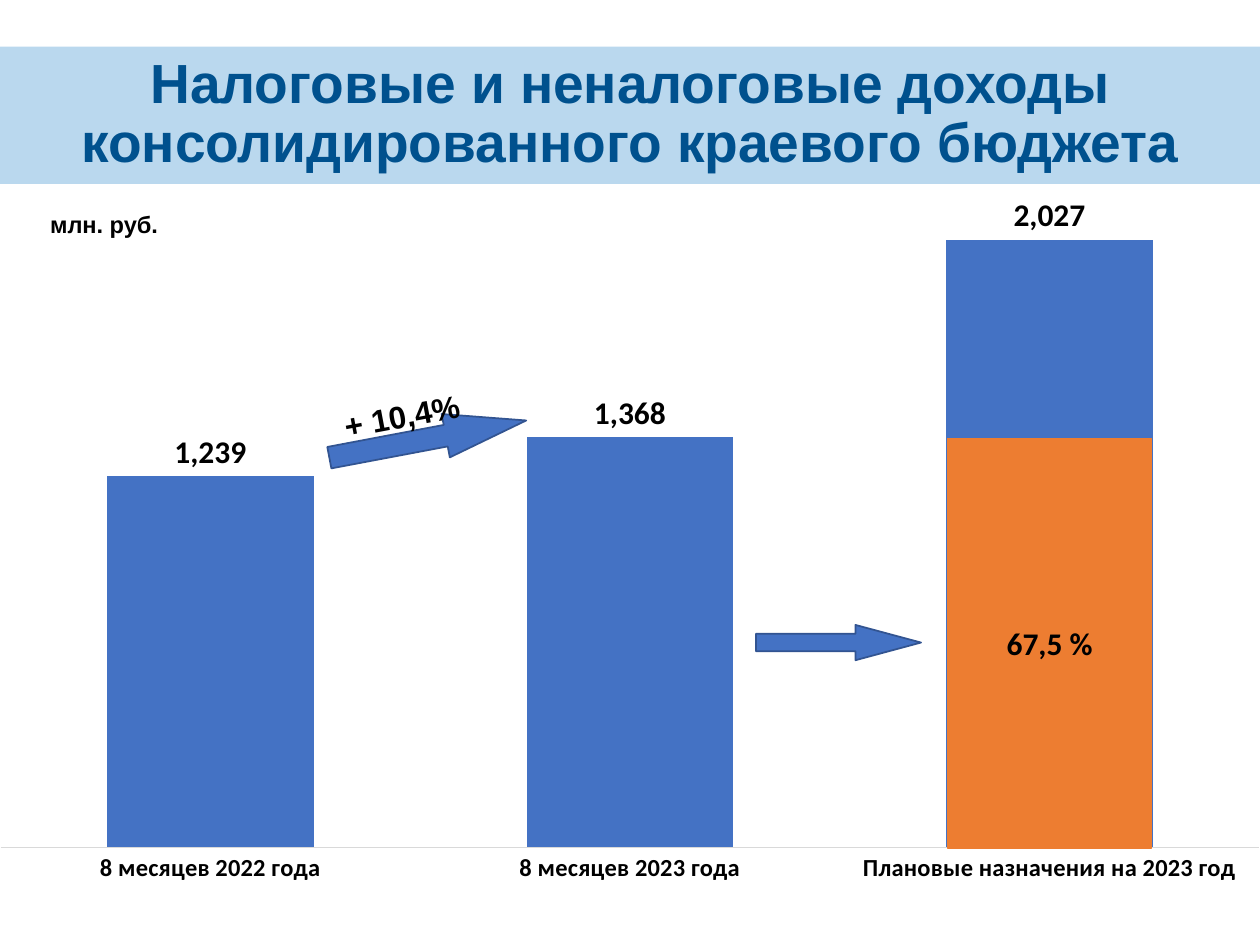
from lxml import etree
from pptx import Presentation
from pptx.chart.data import CategoryChartData
from pptx.dml.color import RGBColor
from pptx.enum import chart as ch, shapes, text
from pptx.oxml import parse_xml
from pptx.oxml.ns import nsdecls
from pptx.util import Inches, Pt

# Content
TITLE = "Налоговые и неналоговые доходы консолидированного краевого бюджета"
UNIT = "млн. руб."
REVENUE = {
    "8 месяцев 2022 года": 1239,
    "8 месяцев 2023 года": 1368,
    "Плановые назначения на 2023 год": 2027,
}
GROWTH, SHARE = "+ 10,4%", "67,5 %"
BLUE, ORANGE, BLACK = "4472C4", "ED7D31", "000000"
ARROW_LINE, TILT = "325491", 349.3
PLOT = {"x": 0, "y": 0.025, "w": 1, "h": 0.847}


def rgb(value):
    return RGBColor.from_string(value)


def style(font, size, name, color=BLACK):
    font.size, font.name, font.bold = Pt(size), name, True
    font.color.rgb = rgb(color)


def write(shape, words, size, name, align=text.PP_ALIGN.CENTER, color=BLACK):
    frame = shape.text_frame
    frame.text = words
    frame.word_wrap = True
    frame.vertical_anchor = text.MSO_ANCHOR.MIDDLE
    frame.paragraphs[0].alignment = align
    style(frame.paragraphs[0].font, size, name, color)


def add_box(kind, box, fill, line):
    shape = slide.shapes.add_shape(kind, *map(Inches, box))
    shape.shadow.inherit = False
    shape.fill.solid()
    shape.fill.fore_color.rgb = rgb(fill)
    shape.line.color.rgb = rgb(line)
    shape.line.width = Pt(1)
    return shape


def add_arrow(box, rotation=0):
    arrow = add_box(shapes.MSO_SHAPE.RIGHT_ARROW, box, BLUE, ARROW_LINE)
    arrow.adjustments[0], arrow.adjustments[1] = 0.494, 1.857
    arrow.rotation = rotation


def add_label(box):
    return slide.shapes.add_textbox(*map(Inches, box))


prs = Presentation()
prs.slide_width, prs.slide_height = Inches(10), Inches(7.5)
slide = prs.slides.add_slide(prs.slide_layouts[5])

# Title band
title = slide.shapes.title
title.left, title.top, title.width, title.height = map(Inches, (0, 0.37, 10, 1.09))
title.fill.solid()
title.fill.fore_color.rgb = rgb("BAD8EE")
write(title, TITLE, 31.5, "Arial", color="00518E")
title.text_frame.auto_size = text.MSO_AUTO_SIZE.NONE
title.text_frame.paragraphs[0].line_spacing = 0.9

# Unit
write(add_label((0.3, 1.61, 1.63, 0.33)), UNIT, 13.5, "Arial", text.PP_ALIGN.LEFT)

# Revenue chart
data = CategoryChartData(number_format="#,##0")
data.categories = list(REVENUE)
data.add_series("Доходы", list(REVENUE.values()))
chart = slide.shapes.add_chart(
    ch.XL_CHART_TYPE.COLUMN_CLUSTERED,
    *map(Inches, (0, 1.46, 10, 6.04)), data).chart
chart.has_legend = chart.has_title = False
chart.font.size, chart.font.name = Pt(10), "Calibri"

years = chart.category_axis
years.major_tick_mark = ch.XL_TICK_MARK.NONE
years.format.line.color.rgb = rgb("D9D9D9")
years.format.line.width = Pt(0.75)
style(years.tick_labels.font, 14, "Calibri")

amounts = chart.value_axis
amounts.visible = amounts.has_major_gridlines = False
amounts.minimum_scale, amounts.maximum_scale = 0, 2150

bars = chart.plots[0]
bars.gap_width, bars.overlap, bars.vary_by_categories = 103, -46, False
bars.series[0].format.fill.solid()
bars.series[0].format.fill.fore_color.rgb = rgb(BLUE)
labels = bars.series[0].data_labels
labels.show_value = True
labels.number_format, labels.number_format_is_linked = "#,##0", False
labels.position = ch.XL_LABEL_POSITION.OUTSIDE_END
style(labels.font, 18, "Calibri")

# Fixed inner plot area
layout = parse_xml(
    f'<c:layout {nsdecls("c")}><c:manualLayout><c:layoutTarget val="inner"/>'
    '<c:xMode val="edge"/><c:yMode val="edge"/>'
    + "".join(f'<c:{key} val="{value}"/>' for key, value in PLOT.items())
    + "</c:manualLayout></c:layout>")
plot_area = chart.plots[0]._element.getparent()
for old in plot_area.findall(etree.QName(layout).text):
    plot_area.remove(old)
plot_area.insert(0, layout)

# Growth arrow and its label
add_arrow((2.6, 3.31, 1.59, 0.35), TILT)
growth = add_label((2.59, 3.1, 1.2, 0.4))
growth.rotation = TILT
write(growth, GROWTH, 18, "Arial")

# Share of the plan reached
share = add_box(shapes.MSO_SHAPE.RECTANGLE, (7.52, 3.48, 1.62, 3.25), ORANGE, ORANGE)
write(share, SHARE, 18, "Calibri")
add_arrow((6, 4.96, 1.31, 0.28))

prs.save("out.pptx")
